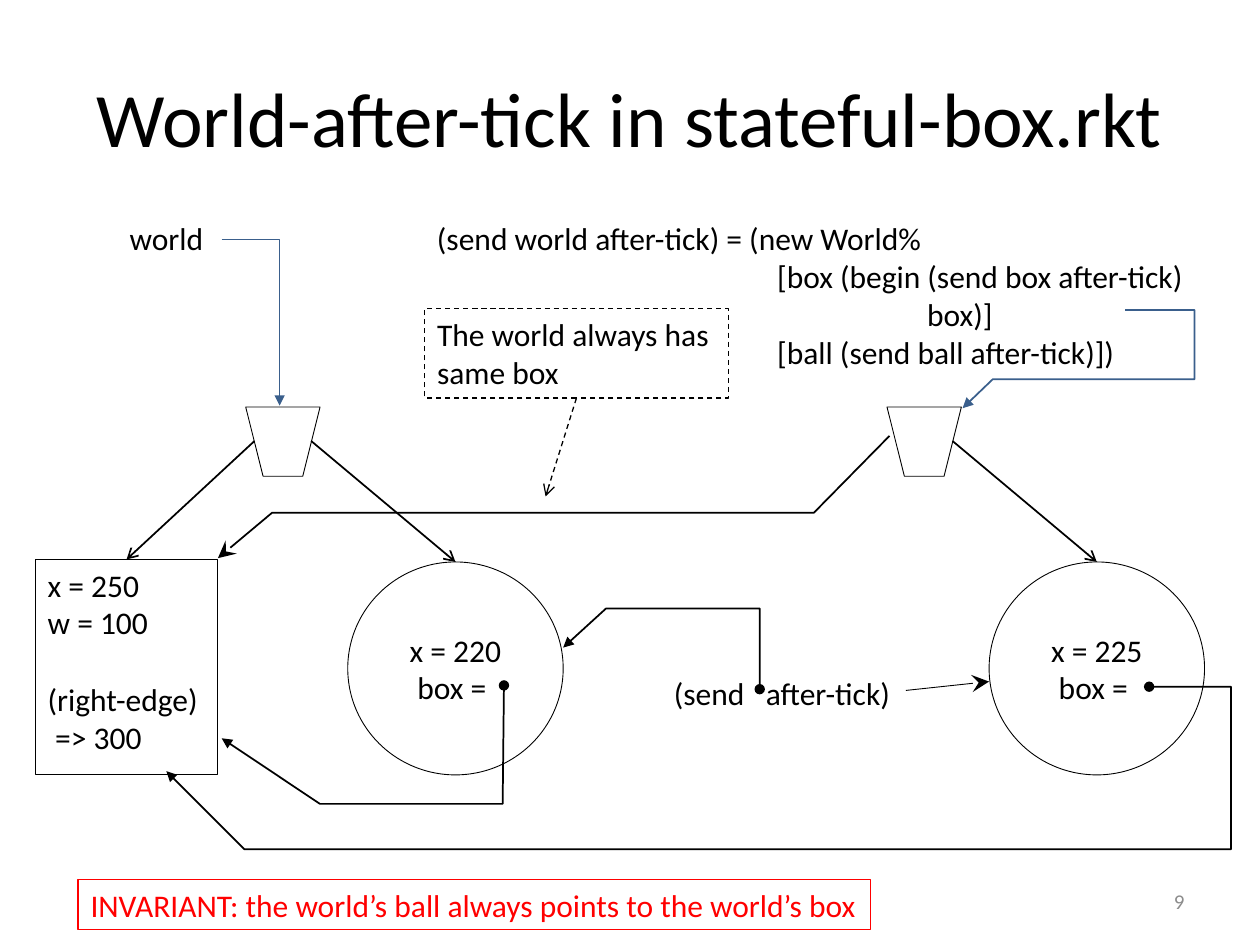
from lxml import etree
from pptx import Presentation
from pptx import util as u
from pptx.dml.color import RGBColor
from pptx.enum import dml, shapes, text
from pptx.oxml import ns

PX = 9144  # EMU per px, 100 px to the inch
BLACK = RGBColor(0x00, 0x00, 0x00)
BLUE = RGBColor(0x3A, 0x5F, 0x8C)
RED = RGBColor(0xFF, 0x00, 0x00)
GREY = RGBColor(0x8C, 0x8C, 0x8C)
LEFT, CENTER, RIGHT = text.PP_ALIGN.LEFT, text.PP_ALIGN.CENTER, text.PP_ALIGN.RIGHT
TOP, MIDDLE = text.MSO_ANCHOR.TOP, text.MSO_ANCHOR.MIDDLE
SHAPE = shapes.MSO_SHAPE
TOP_SIDE, BOTTOM_SIDE = 0, 2


def emu(*lengths):
    return [u.Emu(n * PX) for n in lengths]


def write(sp, lines, size=18, color=BLACK, align=LEFT, anchor=TOP, wrap=True):
    """Fill a shape with lines, each a string or (string, left margin in px)."""
    tf = sp.text_frame
    for name, value in dict(word_wrap=wrap, vertical_anchor=anchor).items():
        setattr(tf, name, value)
    for i, line in enumerate(lines):
        words, margin = (line, 0) if isinstance(line, str) else line
        p = tf.paragraphs[0] if i == 0 else tf.add_paragraph()
        p.alignment = align
        if margin:
            p._p.get_or_add_pPr().set("marL", str(margin * PX))
        r = p.add_run()
        r.text = words
        for name, value in dict(name="Calibri", size=u.Pt(size)).items():
            setattr(r.font, name, value)
        r.font.color.rgb = color
    return tf


def label(s, box, lines, **style):
    return write(s.shapes.add_textbox(*emu(*box)), lines, **style)


def stroke(sp, color=BLACK, width=1, dash=False, head=None, tail=None):
    sp.line.color.rgb = color
    sp.line.width = u.Pt(width)
    if dash:
        sp.line.dash_style = dml.MSO_LINE.DASH
    ln = sp.line._get_or_add_ln()
    for tag, kind in (("a:headEnd", head), ("a:tailEnd", tail)):
        if kind:
            end = etree.SubElement(ln, ns.qn(tag), type=kind)
            if kind == "stealth":
                end.set("w", "lg")
                end.set("len", "lg")


def outline(s, kind, box, **line):
    sp = s.shapes.add_shape(kind, *emu(*box))
    sp.shadow.inherit = False
    sp.fill.background()
    stroke(sp, **line)
    return sp


def arrow(s, start, end, source=None, target=None, **line):
    """Straight arrow, joined to the bottom of source or the top of target."""
    c = s.shapes.add_connector(shapes.MSO_CONNECTOR.STRAIGHT, *emu(*start, *end))
    if source is not None:
        c.begin_connect(source, BOTTOM_SIDE)
    if target is not None:
        c.end_connect(target, TOP_SIDE)
    stroke(c, tail="arrow", **line)
    etree.SubElement(c._element.spPr, ns.qn("a:effectLst"))


def route(s, points, **line):
    """Bent arrow through the points."""
    fb = s.shapes.build_freeform(*points[0], scale=PX)
    fb.add_line_segments(points[1:], close=False)
    sp = fb.convert_to_shape()
    sp.shadow.inherit = False
    sp.fill.background()
    stroke(sp, **line)


def world_and_ball(s, x, y, ball_x):
    """World trapezoid with its ball below right."""
    world = outline(s, SHAPE.TRAPEZOID, (x, y, 59, 55), width=0.5)
    world.rotation = 180
    ball = outline(s, SHAPE.OVAL, (x + 81, y + 123, 171, 169), width=0.5)
    write(ball, [f"x = {ball_x}", "box = "], align=CENTER, anchor=MIDDLE)
    arrow(s, (x + 52, y + 27), (x + 167, y + 123), target=ball)


def stateful_box(s, x, y):
    """The shared box, with the arrow from the first world."""
    box = outline(s, SHAPE.RECTANGLE, (x, y, 145, 171), width=0.5)
    tf = write(box, ["x = 250", "w = 100", "(right-edge)", ("=> 300", 6)])
    tf.paragraphs[1].space_after = u.Pt(22)
    arrow(s, (x + 174, y - 94), (x + 73, y), target=box)


def heading(s, x, y, w, h):
    label(s, (x, y, w, h), ["World-after-tick in stateful-box.rkt"],
          size=44, align=CENTER, anchor=MIDDLE)


def expressions(s, x, y):
    """Code that names the two worlds and the new ball."""
    label(s, (x, y, 79, 40), ["world"], wrap=False)
    label(s, (x + 244, y, 633, 131), [
        "(send world after-tick) = (new World%",
        ("[box (begin (send box after-tick)", 270),
        ("box)]", 389),
        ("[ball (send ball after-tick)])", 270),
    ])
    # The tab leaves room for the dot that stands for the ball
    tf = label(s, (x + 432, y + 361, 195, 40), ["(send\tafter-tick)"], wrap=False)
    tabs = etree.SubElement(tf.paragraphs[0]._p.get_or_add_pPr(), ns.qn("a:tabLst"))
    etree.SubElement(tabs, ns.qn("a:tab"), pos=str(73 * PX), algn="l")


def same_box_note(s, x, y):
    note = outline(s, SHAPE.RECTANGLE, (x, y, 241, 71), width=0.75, dash=True)
    write(note, ["The world always has same box"])
    arrow(s, (x + 120, y + 71), (x + 96, y + 149), source=note, width=0.75, dash=True)


def references(s):
    """Bent arrows between names, worlds, balls and the box."""
    # Names to worlds
    for points in (
        [(176, 190), (222, 190), (222, 322)],
        [(893, 246), (948, 246), (948, 301), (788, 301), (764, 324)],
    ):
        route(s, points, color=BLUE, tail="triangle")
    # New world to box, and expression to new ball
    route(s, [(706, 346), (646, 407), (216, 407), (173, 443)], tail="stealth")
    route(s, [(719, 548), (785, 541)], width=0.5, tail="stealth")
    # Fields to the objects they hold
    for points in (
        [(603, 547), (603, 483), (481, 483), (447, 514)],
        [(400, 544), (399, 638), (254, 638), (176, 586)],
        [(912, 545), (977, 545), (977, 674), (194, 674), (132, 612)],
    ):
        route(s, points, head="oval", tail="triangle")


def footer(s, x, y):
    """Invariant and page number."""
    sp = outline(s, SHAPE.RECTANGLE, (x, y, 629, 40), color=RED, width=0.75)
    write(sp, ["INVARIANT: the world’s ball always points to the world’s box"],
          color=RED, wrap=False)
    label(s, (x + 655, y - 3, 233, 40), ["9"], size=12, color=GREY,
          align=RIGHT, anchor=MIDDLE)


def main():
    prs = Presentation()
    prs.slide_width, prs.slide_height = emu(1000, 750)
    s = prs.slides.add_slide(prs.slide_layouts[6])
    heading(s, 50, 30, 900, 125)
    stateful_box(s, 28, 444)
    for x, ball_x in ((195, 220), (704, 225)):
        world_and_ball(s, x, 323, ball_x)
    expressions(s, 93, 169)
    same_box_note(s, 337, 245)
    references(s)
    footer(s, 62, 698)
    prs.save("out.pptx")


if __name__ == "__main__":
    main()
